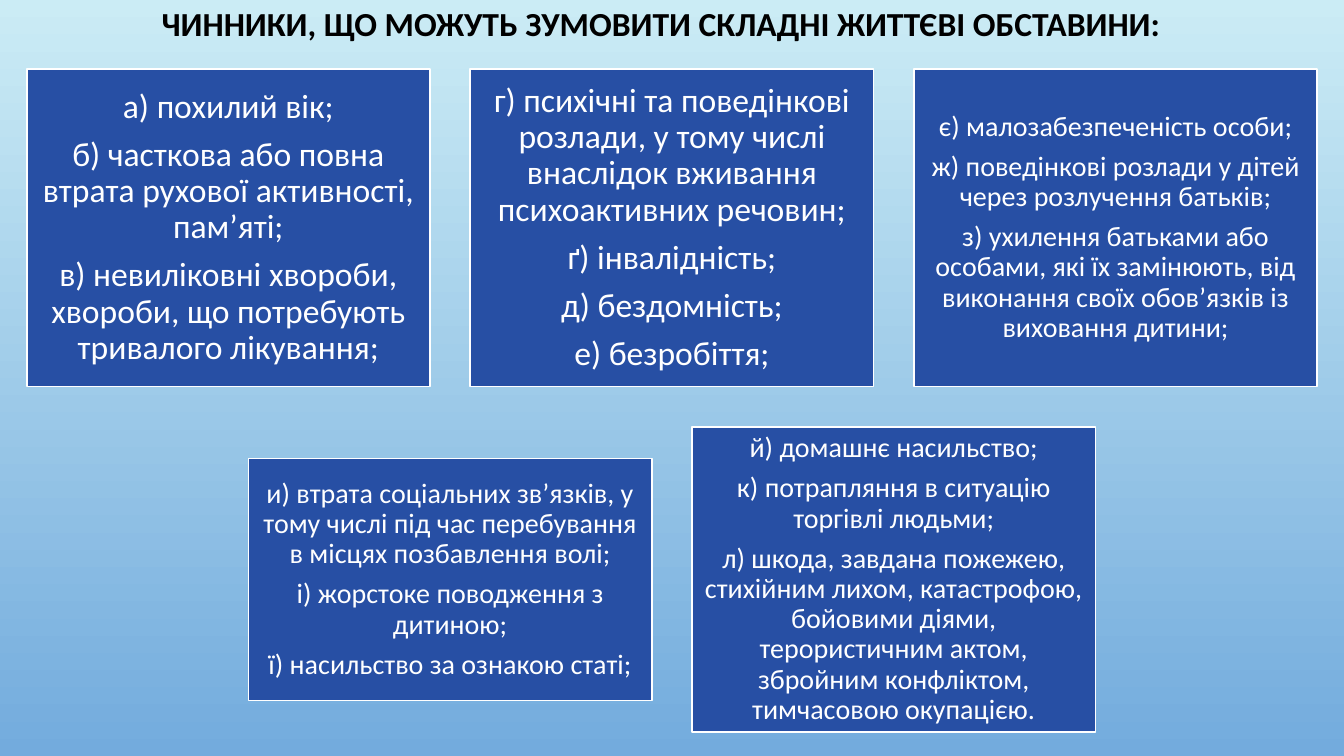
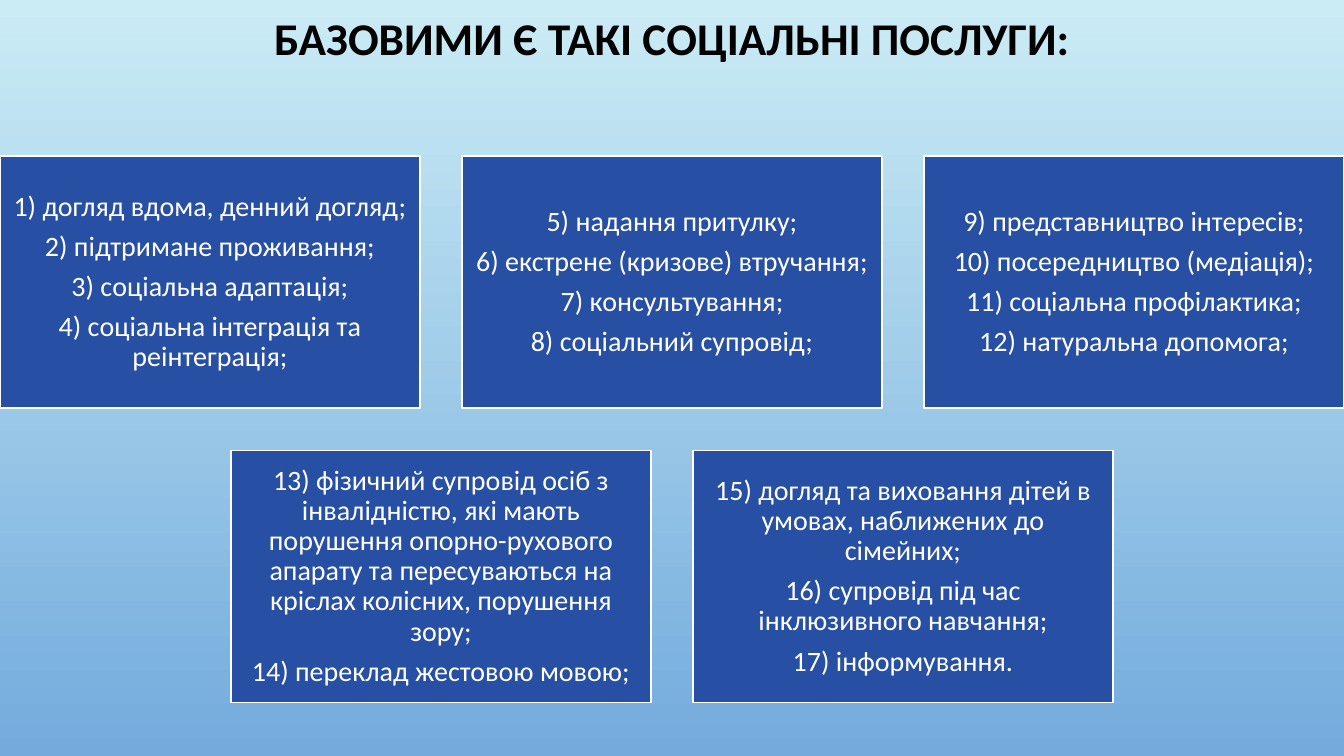
from pptx import Presentation, util as u
from pptx.dml.color import RGBColor
from pptx.enum import shapes, text

# Shared look
SKY_TOP = RGBColor(0xCB, 0xEC, 0xF5)
SKY_BOTTOM = RGBColor(0x73, 0xAB, 0xDD)
CARD_BLUE = RGBColor(0x27, 0x4F, 0xA4)
WHITE = RGBColor(0xFF, 0xFF, 0xFF)
BLACK = RGBColor(0, 0, 0)
FONT = "Calibri"
PAGE_W, PAGE_H = 13.33, 7.5
COLUMNS = 3
GAP_SHARE = 0.1    # gap between cards, as a share of the card width
SPACE_SHARE = 0.35  # space after a paragraph, as a share of the text size

# Content: each row has a vertical centre and cards of (height, text size, lines)
PAGES = [
    {
        "title": "ЧИННИКИ, ЩО МОЖУТЬ ЗУМОВИТИ СКЛАДНІ ЖИТТЄВІ ОБСТАВИНИ:",
        "title_size": 24,
        "title_at": (0.89, 0, 11.33, 0.51),
        "card_width": 4.0,
        "rows": [
            (2.26, [
                (3.15, 24, [
                    "а) похилий вік;",
                    "б) часткова або повна втрата рухової активності, пам’яті;",
                    "в) невиліковні хвороби, хвороби, що потребують тривалого лікування;",
                ]),
                (3.15, 24, [
                    "г) психічні та поведінкові розлади, у тому числі внаслідок "
                    "вживання психоактивних речовин;",
                    "ґ) інвалідність;",
                    "д) бездомність;",
                    "е) безробіття;",
                ]),
                (3.15, 20, [
                    "є) малозабезпеченість особи;",
                    "ж) поведінкові розлади у дітей через розлучення батьків;",
                    "з) ухилення батьками або особами, які їх замінюють, від "
                    "виконання своїх обов’язків із виховання дитини;",
                ]),
            ]),
            (5.75, [
                (2.4, 20, [
                    "и) втрата соціальних зв’язків, у тому числі під час "
                    "перебування в місцях позбавлення волі;",
                    "і) жорстоке поводження з дитиною;",
                    "ї) насильство за ознакою статі;",
                ]),
                (3.03, 20, [
                    "й) домашнє насильство;",
                    "к) потрапляння в ситуацію торгівлі людьми;",
                    "л) шкода, завдана пожежею, стихійним лихом, катастрофою, "
                    "бойовими діями, терористичним актом, збройним конфліктом, "
                    "тимчасовою окупацією.",
                ]),
            ]),
        ],
    },
    {
        "title": "БАЗОВИМИ Є ТАКІ СОЦІАЛЬНІ ПОСЛУГИ:",
        "title_size": 32.4,
        "title_at": (1, 0.1, 11.33, 0.6),
        "card_width": PAGE_W / (COLUMNS + (COLUMNS - 1) * GAP_SHARE),
        "rows": [
            (2.8, [
                (2.5, 20, [
                    "1) догляд вдома, денний догляд;",
                    "2) підтримане проживання;",
                    "3) соціальна адаптація;",
                    "4) соціальна інтеграція та реінтеграція;",
                ]),
                (2.5, 20, [
                    "5) надання притулку;",
                    "6) екстрене (кризове) втручання;",
                    "7) консультування;",
                    "8) соціальний супровід;",
                ]),
                (2.5, 20, [
                    "9) представництво інтересів;",
                    "10) посередництво (медіація);",
                    "11) соціальна профілактика;",
                    "12) натуральна допомога;",
                ]),
            ]),
            (5.72, [
                (2.5, 20, [
                    "13) фізичний супровід осіб з інвалідністю, які мають "
                    "порушення опорно-рухового апарату та пересуваються на "
                    "кріслах колісних, порушення зору;",
                    "14) переклад жестовою мовою;",
                ]),
                (2.5, 20, [
                    "15) догляд та виховання дітей в умовах, наближених до сімейних;",
                    "16) супровід під час інклюзивного навчання;",
                    "17) інформування.",
                ]),
            ]),
        ],
    },
]


def apply(target, **values):
    for name, value in values.items():
        setattr(target, name, value)


def write(box, lines, size, color, bold, inset):
    """Fill a shape with centred paragraphs."""
    frame = box.text_frame
    margin = u.Inches(inset)
    apply(frame, word_wrap=True, auto_size=text.MSO_AUTO_SIZE.NONE,
          vertical_anchor=text.MSO_ANCHOR.MIDDLE, margin_left=margin,
          margin_right=margin, margin_top=margin, margin_bottom=margin)
    for index, line in enumerate(lines):
        para = frame.add_paragraph() if index else frame.paragraphs[0]
        last = index == len(lines) - 1
        apply(para, alignment=text.PP_ALIGN.CENTER, line_spacing=0.9,
              space_before=u.Pt(0),
              space_after=u.Pt(0 if last else size * SPACE_SHARE))
        span = para.add_run()
        span.text = line
        apply(span.font, name=FONT, size=u.Pt(size), bold=bold)
        span.font.color.rgb = color


def add_card(page, left, top, width, height, size, lines):
    box = page.shapes.add_shape(
        shapes.MSO_SHAPE.RECTANGLE,
        *(u.Inches(value) for value in (left, top, width, height)))
    box.shadow.inherit = False
    box.fill.solid()
    box.fill.fore_color.rgb = CARD_BLUE
    box.line.color.rgb = WHITE
    box.line.width = u.Pt(1.25)
    write(box, lines, size, WHITE, False, 0.1 if size > 20 else 0.08)


def add_page(deck, content):
    page = deck.slides.add_slide(deck.slide_layouts[5])
    title = page.shapes.title
    left, top, width, height = (u.Inches(v) for v in content["title_at"])
    apply(title, left=left, top=top, width=width, height=height)
    write(title, [content["title"]], content["title_size"], BLACK, True, 0.05)

    # Every row of cards is centred on the page
    width = content["card_width"]
    gap = width * GAP_SHARE
    for middle, cards in content["rows"]:
        start = (PAGE_W - len(cards) * width - (len(cards) - 1) * gap) / 2
        for column, (height, size, lines) in enumerate(cards):
            add_card(page, start + column * (width + gap), middle - height / 2,
                     width, height, size, lines)


def main():
    deck = Presentation()
    apply(deck, slide_width=u.Inches(PAGE_W), slide_height=u.Inches(PAGE_H))

    # Shared background, on the master
    fill = deck.slide_master.background.fill
    fill.gradient()
    fill.gradient_angle = 270
    for stop, color, position in zip(fill.gradient_stops, (SKY_TOP, SKY_BOTTOM), (0, 1)):
        stop.color.rgb = color
        stop.position = position

    for content in PAGES:
        add_page(deck, content)
    deck.save("out.pptx")


if __name__ == "__main__":
    main()
